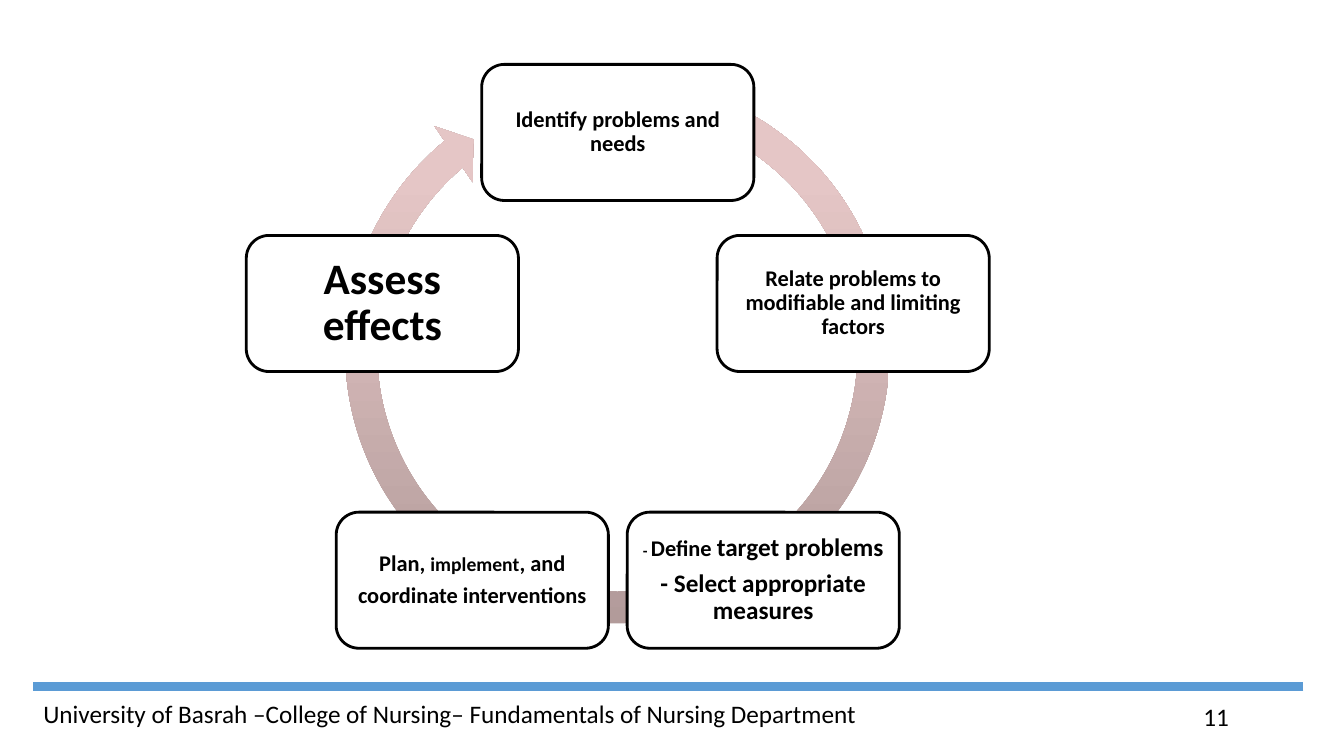
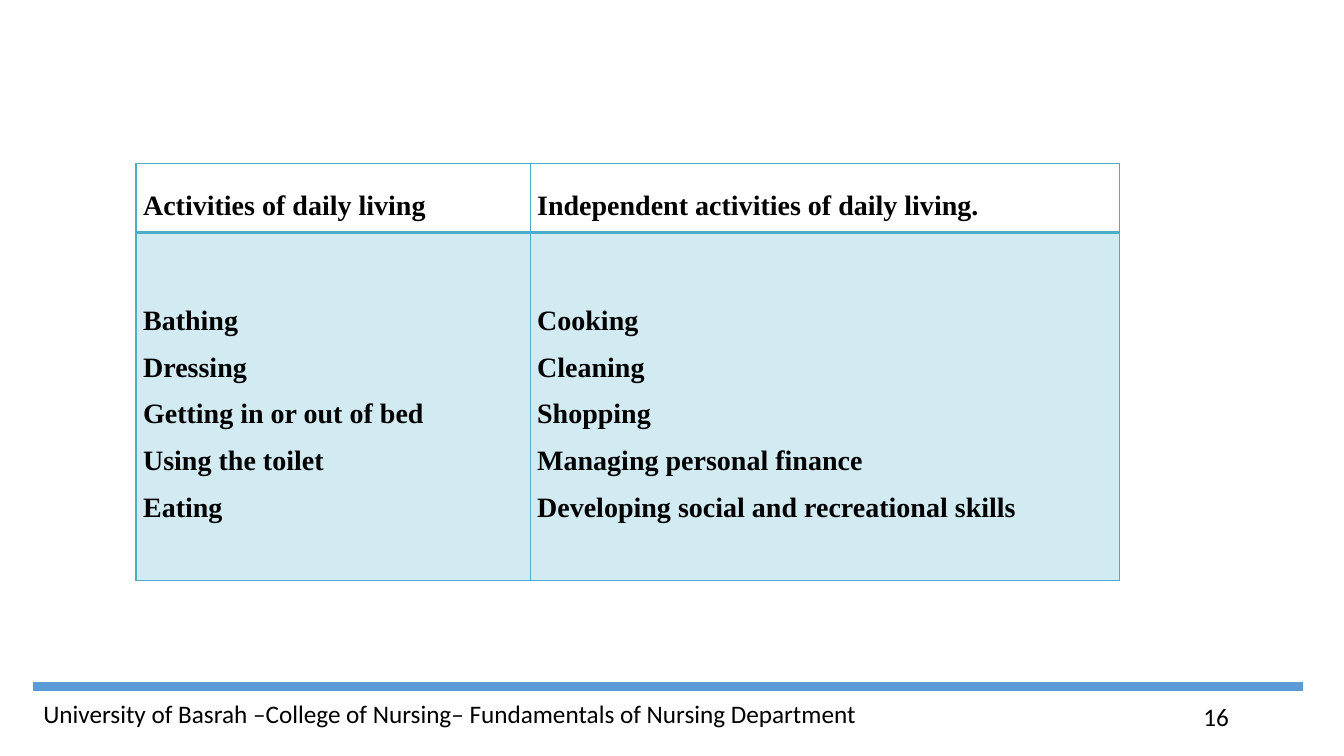
import math

import lxml.etree
import pptx
import pptx.dml.color
import pptx.enum.shapes
import pptx.enum.text
import pptx.oxml.ns
import pptx.util

Pt = pptx.util.Pt
RGBColor = pptx.dml.color.RGBColor
ALIGN = pptx.enum.text.PP_ALIGN
MIDDLE = pptx.enum.text.MSO_ANCHOR.MIDDLE
SHAPE = pptx.enum.shapes.MSO_SHAPE
qn = pptx.oxml.ns.qn

BLACK = RGBColor(0x00, 0x00, 0x00)
WHITE = RGBColor(0xFF, 0xFF, 0xFF)
BAND_BLUE = RGBColor(0x5B, 0x9B, 0xD5)
RING_DARK = RGBColor(0xB0, 0x99, 0x98)
RING_LIGHT = RGBColor(0xE5, 0xC6, 0xC6)
TABLE_TEAL = RGBColor(0x4B, 0xAC, 0xC6)
TABLE_TINT = RGBColor(0xD2, 0xEA, 0xF1)

BODY_FONT = "Calibri"
TABLE_FONT = "Times New Roman"
FOOTER = "University of Basrah –College of Nursing– Fundamentals of Nursing Department"

CYCLE_CENTER = (441.3, 271.4)
CYCLE_RADIUS = 176.8
STEP_SIZE = (194.4, 97.2)
CYCLE_STEPS = [
    (5, [[("Identify problems and needs", 16)]]),
    (5, [[("Relate problems to modifiable and limiting factors", 16)]]),
    (3.6, [
        [("- ", 11), ("Define ", 16), ("target problems", 18)],
        [("- Select appropriate measures", 18)],
    ]),
    (5, [
        [("Plan, ", 16), ("implement", 14), (", and", 16)],
        [("coordinate interventions", 16)],
    ]),
    (9.4, [[("Assess effects", 31)]]),
]

ACTIVITY_ROWS = [
    [["Activities of daily living"], ["Independent activities of daily living."]],
    [
        ["Bathing", "Dressing", "Getting in or out of bed", "Using the toilet", "Eating"],
        [
            "Cooking",
            "Cleaning",
            "Shopping",
            "Managing personal finance",
            "Developing social and recreational skills",
        ],
    ],
]
COLUMN_WIDTHS = [281.5, 421.2]
ROW_HEIGHTS = [49.7, 248.4]


def style_font(font, name, size, bold=False):
    font.name = name
    font.size = Pt(size)
    font.bold = bold
    font.color.rgb = BLACK


def get_paragraph(frame, index):
    return frame.paragraphs[0] if index == 0 else frame.add_paragraph()


def set_margins(target, side, vertical):
    target.margin_left = target.margin_right = Pt(side)
    target.margin_top = target.margin_bottom = Pt(vertical)


def add_label(page, text, left, top, width, height):
    frame = page.shapes.add_textbox(Pt(left), Pt(top), Pt(width), Pt(height)).text_frame
    frame.word_wrap = True
    para = frame.paragraphs[0]
    para.text = text
    style_font(para.font, BODY_FONT, 18)
    return frame


def add_page(deck, number):
    page = deck.slides.add_slide(deck.slide_layouts[6])
    band = page.shapes.add_connector(
        pptx.enum.shapes.MSO_CONNECTOR.STRAIGHT, Pt(931), Pt(490.3), Pt(23.8), Pt(490.3)
    )
    band.line.color.rgb = BAND_BLUE
    band.line.width = Pt(6)
    lxml.etree.SubElement(band._element.spPr, qn("a:effectLst"))
    footer = add_label(page, FOOTER, 23.8, 495.4, 622.8, 28.8)
    footer.auto_size = pptx.enum.text.MSO_AUTO_SIZE.SHAPE_TO_FIT_TEXT
    number_frame = add_label(page, str(number), 787.7, 491.8, 162, 39.6)
    number_frame.vertical_anchor = MIDDLE
    number_frame.paragraphs[0].alignment = ALIGN.CENTER
    return page


def add_ring(page):
    ring = page.shapes.add_shape(
        SHAPE.CIRCULAR_ARROW, Pt(234), Pt(43.9), Pt(414), Pt(414)
    )
    for index, value in enumerate([0.055, 3.307, 138.165, 173.613, 0.058]):
        ring.adjustments[index] = value
    ring.shadow.inherit = False
    ring.line.fill.background()
    ring.fill.gradient()
    ring.fill.gradient_angle = 90
    for stop, color, position in zip(
        ring.fill.gradient_stops, (RING_DARK, RING_LIGHT), (0, 0.8)
    ):
        stop.color.rgb = color
        stop.position = position


def add_step(page, center_x, center_y, margin, lines):
    width, height = STEP_SIZE
    box = page.shapes.add_shape(
        SHAPE.ROUNDED_RECTANGLE,
        Pt(center_x - width / 2),
        Pt(center_y - height / 2),
        Pt(width),
        Pt(height),
    )
    box.shadow.inherit = False
    box.fill.solid()
    box.fill.fore_color.rgb = WHITE
    box.line.color.rgb = BLACK
    box.line.width = Pt(2)
    frame = box.text_frame
    frame.word_wrap = True
    frame.vertical_anchor = MIDDLE
    set_margins(frame, margin, margin)
    for index, spans in enumerate(lines):
        para = get_paragraph(frame, index)
        para.alignment = ALIGN.CENTER
        para.line_spacing = 0.9
        para.space_after = Pt(6)
        base_size = spans[-1][1]
        style_font(para.font, BODY_FONT, base_size, bold=True)
        for text, size in spans:
            span = para.add_run()
            span.text = text
            if size != base_size:
                span.font.size = Pt(size)


def add_cycle(page):
    add_ring(page)
    for index, (margin, lines) in enumerate(CYCLE_STEPS):
        angle = math.radians(360 / len(CYCLE_STEPS) * index - 90)
        center_x = CYCLE_CENTER[0] + CYCLE_RADIUS * math.cos(angle)
        center_y = CYCLE_CENTER[1] + CYCLE_RADIUS * math.sin(angle)
        add_step(page, center_x, center_y, margin, lines)


def set_borders(cell, widths):
    properties = cell._tc.get_or_add_tcPr()
    for side, width in widths.items():
        border = lxml.etree.SubElement(properties, qn("a:ln" + side), w=str(int(Pt(width))))
        fill = lxml.etree.SubElement(border, qn("a:solidFill"))
        lxml.etree.SubElement(fill, qn("a:srgbClr"), val=str(TABLE_TEAL))


def fill_cell(cell, lines, is_header):
    top, bottom = (1, 2.25) if is_header else (2.25, 1)
    set_borders(cell, {"L": 1, "R": 1, "T": top, "B": bottom})
    if is_header:
        cell.fill.background()
    else:
        cell.fill.solid()
        cell.fill.fore_color.rgb = TABLE_TINT
    cell.vertical_anchor = MIDDLE
    set_margins(cell, 5, 0)
    for index, text in enumerate(lines):
        para = get_paragraph(cell.text_frame, index)
        para.text = text
        para.line_spacing = 1.5
        style_font(para.font, TABLE_FONT, 20, bold=True)


def add_activity_table(page):
    table = page.shapes.add_table(
        len(ROW_HEIGHTS),
        len(COLUMN_WIDTHS),
        Pt(97.2),
        Pt(116.6),
        Pt(sum(COLUMN_WIDTHS)),
        Pt(sum(ROW_HEIGHTS)),
    ).table
    table.first_row = False
    table.horz_banding = False
    for column, width in zip(table.columns, COLUMN_WIDTHS):
        column.width = Pt(width)
    for row_index, (row, height) in enumerate(zip(table.rows, ROW_HEIGHTS)):
        row.height = Pt(height)
        for cell, lines in zip(row.cells, ACTIVITY_ROWS[row_index]):
            fill_cell(cell, lines, row_index == 0)


def main():
    deck = pptx.Presentation()
    deck.slide_width = Pt(960)
    deck.slide_height = Pt(540)
    add_cycle(add_page(deck, 11))
    add_activity_table(add_page(deck, 16))
    deck.save("out.pptx")


if __name__ == "__main__":
    main()
